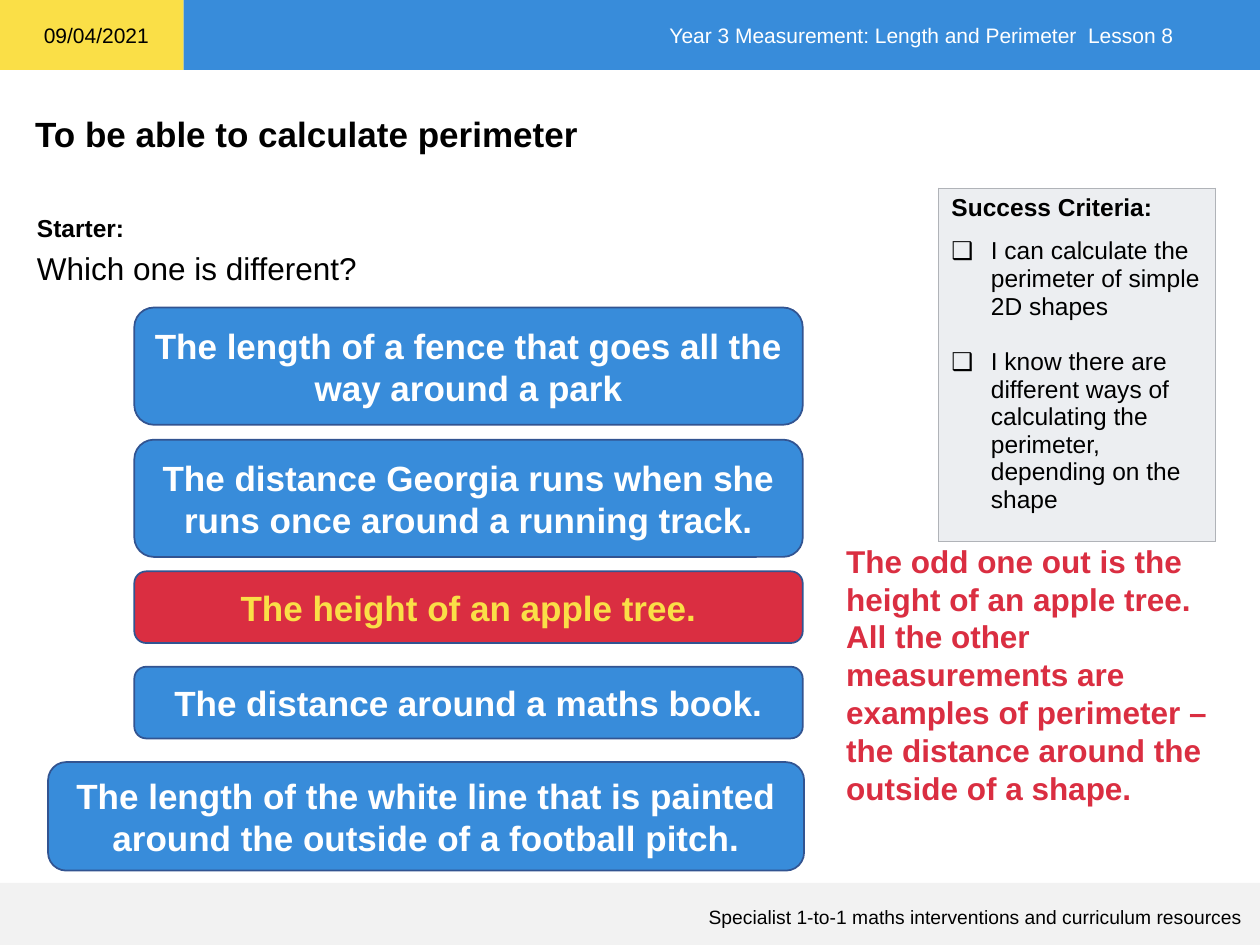
from lxml.etree import SubElement
from pptx import Presentation
from pptx.dml.color import RGBColor
from pptx.enum.shapes import MSO_SHAPE
from pptx.enum.text import MSO_ANCHOR, PP_ALIGN
from pptx.oxml.ns import qn
from pptx.util import Pt

COLOURS = {
    "blue": "388CDA",
    "outline": "325491",
    "yellow": "FADF47",
    "red": "DA2E41",
    "footer": "F2F2F2",
    "panel": "ECEEF1",
    "border": "B0B3B8",
    "white": "FFFFFF",
    "black": "000000",
}


def colour(name):
    return RGBColor.from_string(COLOURS[name])


def write(para, text, size=20, colour_name="black", bold=False,
          align=PP_ALIGN.LEFT, before=0):
    para.alignment = align
    para.space_before = Pt(before)
    span = para.add_run()
    span.text = text
    span.font.name = "Arial"
    span.font.size = Pt(size)
    span.font.bold = bold
    span.font.color.rgb = colour(colour_name)


def add_bullet(para, symbol, indent):
    properties = para._p.get_or_add_pPr()
    properties.set("marL", str(Pt(indent)))
    properties.set("indent", str(-Pt(indent)))
    SubElement(properties, qn("a:buFont")).set("typeface", "Arial")
    SubElement(properties, qn("a:buChar")).set("char", symbol)


def add_panel(page, kind, bounds, fill, outline=None):
    panel = page.shapes.add_shape(kind, *map(Pt, bounds))
    panel.shadow.inherit = False
    panel.fill.solid()
    panel.fill.fore_color.rgb = colour(fill)
    if outline:
        panel.line.color.rgb = colour(outline)
        panel.line.width = Pt(1)
    else:
        panel.line.fill.background()
    panel.text_frame.word_wrap = True
    panel.text_frame.vertical_anchor = MSO_ANCHOR.MIDDLE
    return panel


def add_text(page, bounds, lines, wrap=True, **style):
    box = page.shapes.add_textbox(*map(Pt, bounds))
    frame = box.text_frame
    frame.word_wrap = wrap
    for index, line in enumerate(lines):
        para = frame.add_paragraph() if index else frame.paragraphs[0]
        write(para, line, **style)


def add_card(page, bounds, text, fill="blue", text_colour="white"):
    card = add_panel(page, MSO_SHAPE.ROUNDED_RECTANGLE, bounds, fill, "outline")
    write(card.text_frame.paragraphs[0], text, colour_name=text_colour,
          bold=True, align=PP_ALIGN.CENTER)


def add_borders(cell, name, width):
    properties = cell._tc.get_or_add_tcPr()
    for position, side in enumerate(("a:lnL", "a:lnR", "a:lnT", "a:lnB")):
        line = SubElement(properties, qn(side), w=str(Pt(width)))
        properties.insert(position, line)
        fill = SubElement(line, qn("a:solidFill"))
        SubElement(fill, qn("a:srgbClr"), val=COLOURS[name])


def add_criteria(page, bounds, heading, criteria):
    table = page.shapes.add_table(1, 1, *map(Pt, bounds)).table
    cell = table.cell(0, 0)
    cell.fill.solid()
    cell.fill.fore_color.rgb = colour("panel")
    add_borders(cell, "border", 0.75)
    frame = cell.text_frame
    write(frame.paragraphs[0], heading, size=14, bold=True)
    for text, gap in zip(criteria, (9, 16)):
        para = frame.add_paragraph()
        add_bullet(para, "❑", 22.5)
        write(para, text, size=14, before=gap)


def add_bands(page):
    add_panel(page, MSO_SHAPE.RECTANGLE, (0, 0, 105, 40), "yellow")
    header = add_panel(page, MSO_SHAPE.RECTANGLE, (105, 0, 615, 40), "blue")
    header.text_frame.margin_right = Pt(49)
    write(header.text_frame.paragraphs[0],
          "Year 3 Measurement: Length and Perimeter  Lesson 8",
          size=12, colour_name="white", align=PP_ALIGN.RIGHT)
    add_panel(page, MSO_SHAPE.RECTANGLE, (0, 504.5, 720, 35.5), "footer")
    add_text(page, (30, 514, 687, 20),
             ["Specialist 1-to-1 maths interventions and curriculum resources"],
             size=11, align=PP_ALIGN.RIGHT)
    add_text(page, (18, 9.5, 75, 22), ["09/04/2021"], wrap=False, size=12)


def add_cards(page):
    left, width = 76.75, 382
    add_card(page, (left, 175.75, width, 67),
             "The length of a fence that goes all the way around a park")
    add_card(page, (left, 251.25, width, 67),
             "The distance Georgia runs when she runs once around a running track.")
    add_card(page, (left, 326.5, width, 41),
             "The height of an apple tree.", "red", "yellow")
    add_card(page, (left, 381, width, 41), "The distance around a maths book.")
    add_card(page, (27.5, 435.5, 432, 62),
             "The length of the white line that is painted around "
             "the outside of a football pitch.")


def main():
    deck = Presentation()
    deck.slide_width, deck.slide_height = Pt(720), Pt(540)
    page = deck.slides.add_slide(deck.slide_layouts[6])
    add_bands(page)
    add_text(page, (13, 60.5, 703, 32),
             ["To be able to calculate perimeter"], bold=True)
    add_text(page, (14, 118, 65, 24), ["Starter:"], wrap=False, size=14, bold=True)
    add_text(page, (14, 138.5, 683, 29), ["Which one is different?"], size=18)
    add_cards(page)
    add_text(page, (476.5, 306, 232, 204),
             ["The odd one out is the height of an apple tree.",
              "All the other measurements are examples of perimeter – "
              "the distance around the outside of a shape."],
             size=18, colour_name="red", bold=True)
    add_criteria(page, (536.5, 107.5, 158, 202), "Success Criteria:",
                 ["I can calculate the perimeter of simple 2D shapes",
                  "I know there are different ways of calculating the "
                  "perimeter, depending on the shape"])
    deck.save("out.pptx")


if __name__ == "__main__":
    main()
